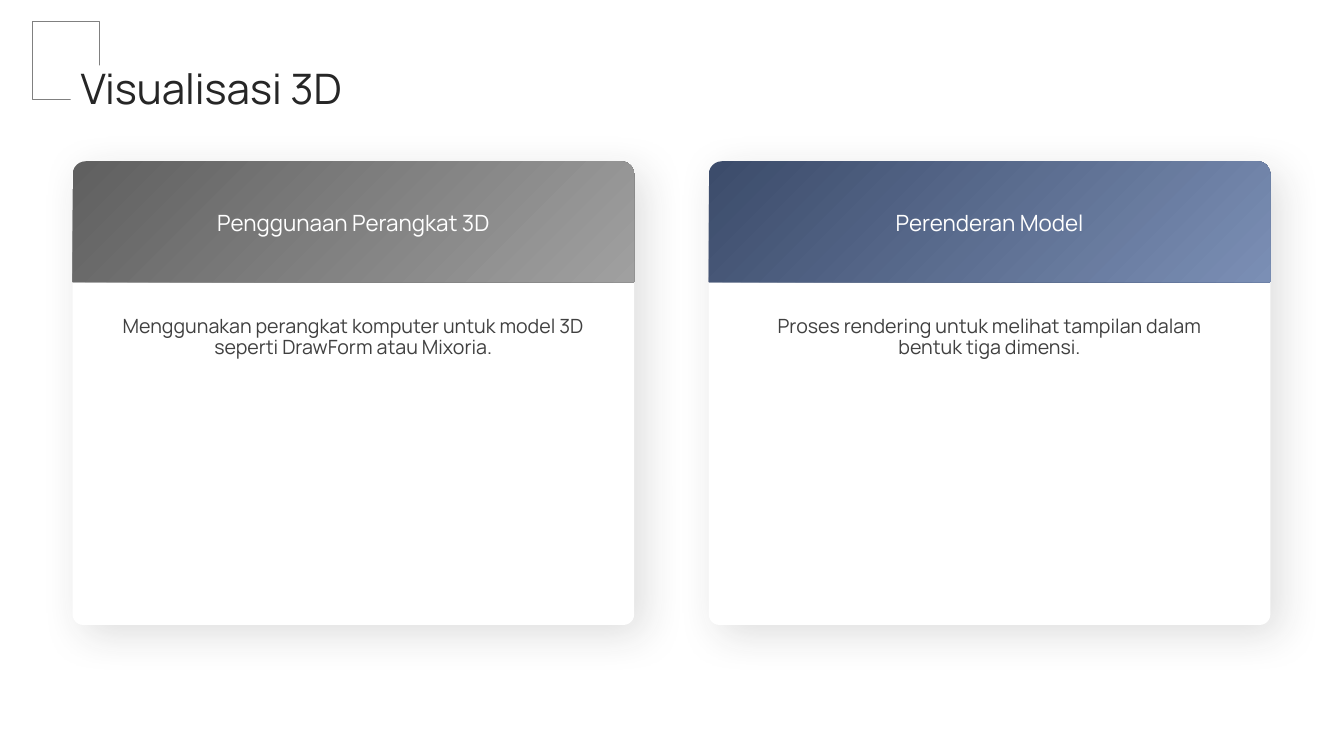
"""Build a slide with two gradient-headed cards about 3D visualisation."""
from lxml import etree
from pptx import Presentation
from pptx.dml.color import RGBColor
from pptx.enum import shapes, text
from pptx.oxml import ns
from pptx.util import Inches, Pt

TITLE = "Visualisasi 3D"
CARDS = [
    ("Penggunaan Perangkat 3D",
     "Menggunakan perangkat komputer untuk model 3D seperti DrawForm atau Mixoria.",
     ("606060", "A0A0A0")),
    ("Perenderan Model",
     "Proses rendering untuk melihat tampilan dalam bentuk tiga dimensi.",
     ("3C4C6B", "7B8FB5")),
]
FONT = "Manrope"
CARD_LEFT, CARD_TOP, CARD_STEP = 0.72, 1.61, 6.31
CARD_WIDTH, CARD_HEIGHT, HEADER_HEIGHT = 5.57, 4.59, 1.2
CORNER, PADDING = 0.13, 0.4


def color(value):
    return RGBColor.from_string(value)


def add_box(slide, kind, box, fill=None, line=None):
    shape = slide.shapes.add_shape(kind, *map(Inches, box))
    shape.shadow.inherit = False
    if fill:
        shape.fill.solid()
        shape.fill.fore_color.rgb = color(fill)
    else:
        shape.fill.background()
    if line:
        shape.line.color.rgb = color(line)
        shape.line.width = Pt(0.75)
    else:
        shape.line.fill.background()
    return shape


def add_text(slide, box, words, size, ink, align, anchor, spacing=0.9):
    frame = slide.shapes.add_textbox(*map(Inches, box)).text_frame
    frame.word_wrap = True
    frame.vertical_anchor = anchor
    frame.margin_left = frame.margin_right = 0
    frame.margin_top = frame.margin_bottom = 0
    paragraph = frame.paragraphs[0]
    paragraph.alignment = align
    paragraph.line_spacing = spacing
    run = paragraph.add_run()
    run.text = words
    run.font.name = FONT
    run.font.size = Pt(size)
    run.font.color.rgb = color(ink)


def add_soft_shadow(shape):
    effects = shape._element.spPr.find(ns.qn("a:effectLst"))
    shadow = etree.SubElement(
        effects, ns.qn("a:outerShdw"), blurRad=str(Pt(30)), dist=str(Pt(10)),
        dir=str(45 * 60000), algn="tl", rotWithShape="0")
    tone = etree.SubElement(shadow, ns.qn("a:srgbClr"), val="262626")
    etree.SubElement(tone, ns.qn("a:alpha"), val="15000")


def add_card(slide, left, heading, body, gradient):
    kinds = shapes.MSO_SHAPE
    panel = add_box(slide, kinds.ROUNDED_RECTANGLE,
                    (left, CARD_TOP, CARD_WIDTH, CARD_HEIGHT), "FFFFFF")
    panel.adjustments[0] = 0.023
    add_soft_shadow(panel)

    header = add_box(slide, kinds.ROUND_2_SAME_RECTANGLE,
                     (left, CARD_TOP - 0.01, CARD_WIDTH, HEADER_HEIGHT))
    header.adjustments[0] = CORNER / HEADER_HEIGHT
    header.fill.gradient()
    header.fill.gradient_angle = 315
    for stop, position, tone in zip(header.fill.gradient_stops, (0.01, 1), gradient):
        stop.position = position
        stop.color.rgb = color(tone)

    text_left, text_width = left + PADDING, CARD_WIDTH - 2 * PADDING
    center = text.PP_ALIGN.CENTER
    add_text(slide, (text_left, 3.14, text_width, 2.69), body, 14, "404040",
             center, text.MSO_ANCHOR.TOP)
    add_text(slide, (text_left, 1.66, text_width, 1.12), heading, 16, "FFFFFF",
             center, text.MSO_ANCHOR.MIDDLE)


def main():
    presentation = Presentation()
    presentation.slide_width, presentation.slide_height = Inches(13.33), Inches(7.5)
    slide = presentation.slides.add_slide(presentation.slide_layouts[6])
    for index, card in enumerate(CARDS):
        add_card(slide, CARD_LEFT + index * CARD_STEP, *card)
    rectangle = shapes.MSO_SHAPE.RECTANGLE
    add_box(slide, rectangle, (0.32, 0.21, 0.67, 0.78), line="808080")
    add_box(slide, rectangle, (0.7, 0.65, 0.61, 0.5), "FFFFFF")
    add_text(slide, (0.8, 0.68, 11.1, 0.46), TITLE, 30, "262626",
             text.PP_ALIGN.LEFT, text.MSO_ANCHOR.TOP)
    presentation.save("out.pptx")


if __name__ == "__main__":
    main()
